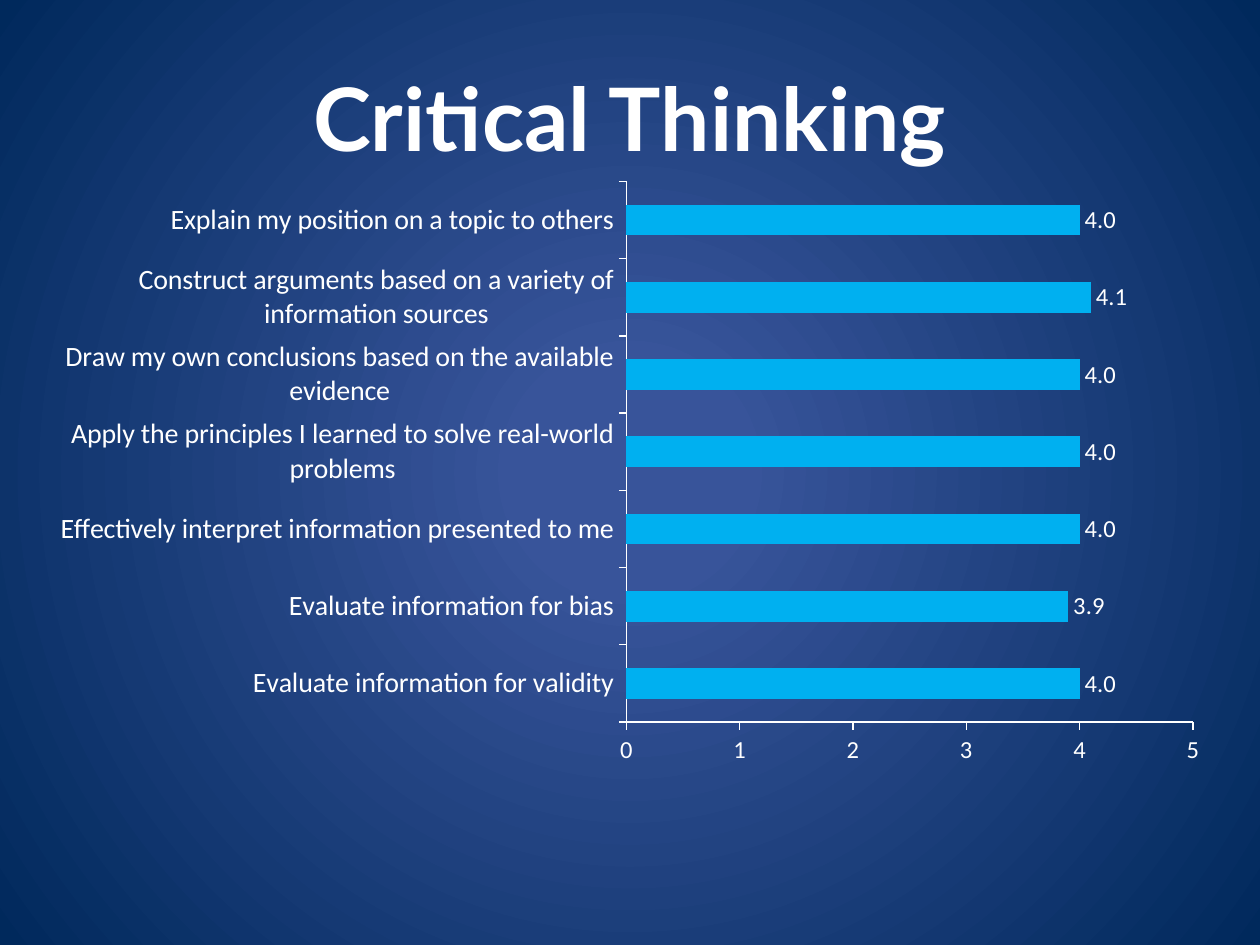
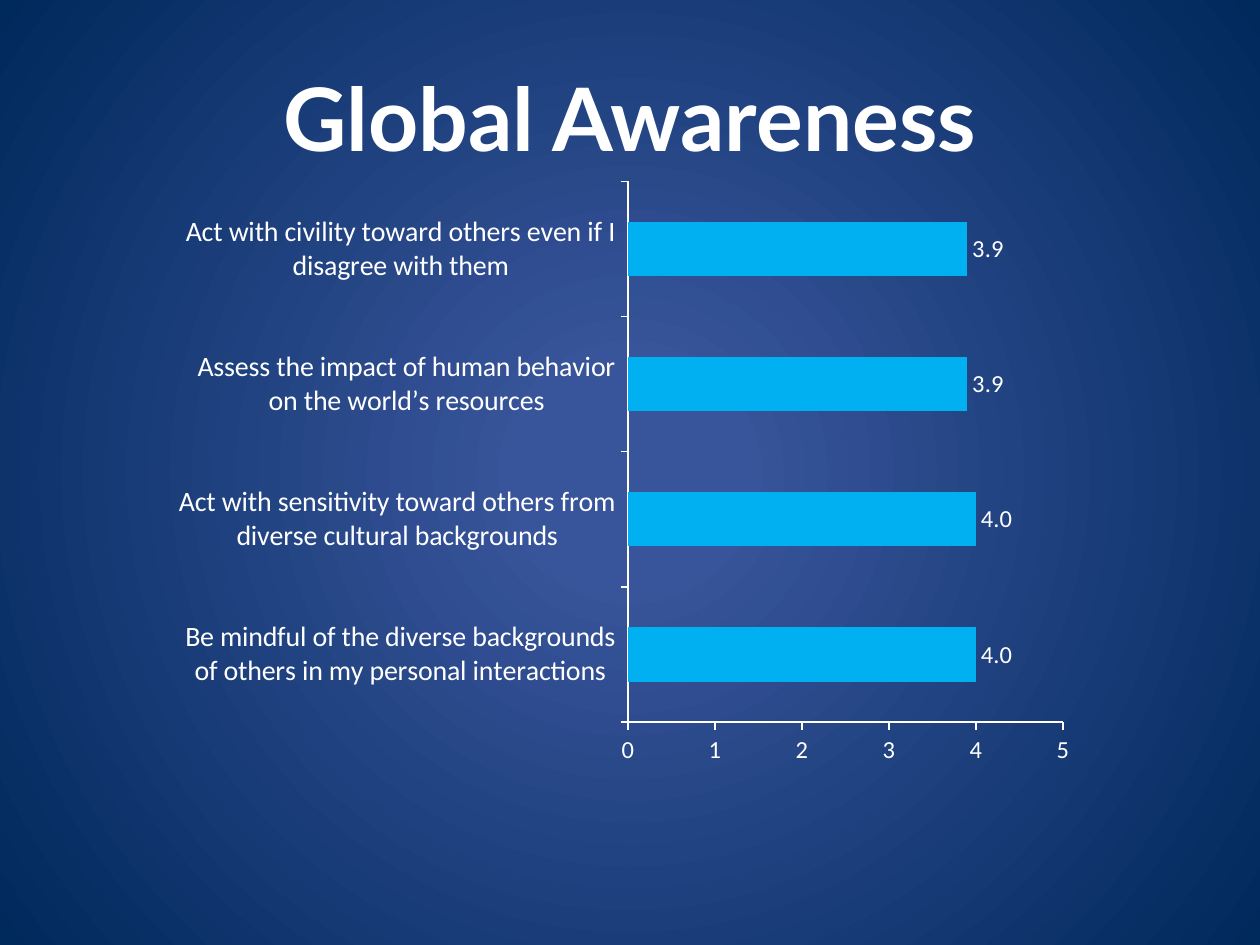
from dataclasses import dataclass

from lxml import etree
from pptx import Presentation
from pptx.chart.data import CategoryChartData as ChartData
from pptx.dml.color import RGBColor as Rgb
from pptx.enum.chart import XL_CHART_TYPE as Kind
from pptx.enum.chart import XL_LABEL_POSITION as Spot
from pptx.enum.chart import XL_TICK_MARK as Tick
from pptx.enum.text import MSO_ANCHOR as Anchor
from pptx.enum.text import PP_ALIGN as Align
from pptx.oxml import parse_xml
from pptx.oxml.ns import nsdecls, qn
from pptx.util import Inches, Pt

WIDE, HIGH = Inches(10), Inches(7.5)
COLORS = {"text": "FFFFFF", "bar": "00B0F0", "glow": "38549A", "edge": "00295C"}
HEAD, BODY = "Lato", "Calibri"
PLOT = {"x": 0.497, "y": 0.051, "w": 0.483, "h": 0.833}  # shares of the chart


@dataclass
class Box:
    """Left, top, width and height as shares of the slide."""
    x: float
    y: float
    w: float
    h: float

    def place(self) -> list[int]:
        return [round(part * side) for part, side in
                zip((self.x, self.y, self.w, self.h), (WIDE, HIGH) * 2)]


@dataclass
class Survey:
    title: str
    width: float  # share of the slide, centred
    scores: dict[str, float]  # bottom bar first


TITLE = Box(0.05, 0.04, 0.9, 0.1667)
SURVEYS = [
    Survey("Critical Thinking", 0.931, {
        "Evaluate information for validity": 4.0,
        "Evaluate information for bias": 3.9,
        "Effectively interpret information presented to me": 4.0,
        "Apply the principles I learned to solve real-world problems": 4.0,
        "Draw my own conclusions based on the available evidence": 4.0,
        "Construct arguments based on a variety of information sources": 4.1,
        "Explain my position on a topic to others": 4.0,
    }),
    Survey("Global Awareness", 0.716, {
        "Be mindful of the diverse backgrounds of others in my personal interactions": 4.0,
        "Act with sensitivity toward others from diverse cultural backgrounds": 4.0,
        "Assess the impact of human behavior on the world’s resources": 3.9,
        "Act with civility toward others even if I disagree with them": 3.9,
    }),
]


def style(font, size: int, name: str = BODY, bold: bool = False) -> None:
    font.size, font.name, font.bold = Pt(size), name, bold
    font.color.rgb = Rgb.from_string(COLORS["text"])


def paint(slide) -> None:
    """Give the slide a round glow that darkens toward its edge."""
    fill = slide.background.fill
    fill.solid()
    old = slide.background._cSld.find(".//" + qn("a:solidFill"))
    glow = parse_xml(
        f'<a:gradFill {nsdecls("a")} rotWithShape="1"><a:gsLst>'
        f'<a:gs pos="14000"><a:srgbClr val="{COLORS["glow"]}">'
        '<a:alpha val="73000"/></a:srgbClr></a:gs>'
        f'<a:gs pos="100000"><a:srgbClr val="{COLORS["edge"]}"/></a:gs></a:gsLst>'
        '<a:path path="circle"><a:fillToRect l="50000" t="50000" r="50000" b="50000"/>'
        '</a:path></a:gradFill>')
    old.getparent().replace(old, glow)


def add_title(slide, text: str) -> None:
    frame = slide.shapes.add_textbox(*TITLE.place()).text_frame
    frame.word_wrap = True
    frame.vertical_anchor = Anchor.MIDDLE
    frame.text = text
    line = frame.paragraphs[0]
    line.alignment = Align.CENTER
    style(line.runs[0].font, 50, HEAD, True)


def pin_plot(chart) -> None:
    """Fix the inner plot area, so both charts share one axis position."""
    area = chart._chartSpace.chart.plotArea
    for old in area.findall(qn("c:layout")):
        area.remove(old)
    layout = etree.Element(qn("c:layout"))
    manual = etree.SubElement(layout, qn("c:manualLayout"))
    marks = {"layoutTarget": "inner", "xMode": "edge", "yMode": "edge", **PLOT}
    for tag, val in marks.items():
        etree.SubElement(manual, qn("c:" + tag), val=str(val))
    area.insert(0, layout)


def set_axis(axis, size: int) -> None:
    axis.has_major_gridlines = False
    axis.major_tick_mark, axis.minor_tick_mark = Tick.OUTSIDE, Tick.NONE
    axis.format.line.color.rgb = Rgb.from_string(COLORS["text"])
    axis.format.line.width = Pt(0.75)
    style(axis.tick_labels.font, size)


def add_bars(slide, survey: Survey) -> None:
    data = ChartData(number_format="0.0")
    data.categories = list(survey.scores)
    data.add_series("Series 1", list(survey.scores.values()))
    box = Box((1 - survey.width) / 2, 0.157, survey.width, 0.687)
    chart = slide.shapes.add_chart(Kind.BAR_CLUSTERED, *box.place(), data).chart
    style(chart.font, 10)
    chart.has_legend = chart.has_title = False
    pin_plot(chart)

    set_axis(chart.category_axis, 16)
    scale = chart.value_axis
    set_axis(scale, 14)
    scale.minimum_scale, scale.maximum_scale, scale.major_unit = 0, 5, 1
    scale.tick_labels.number_format = "0"
    scale.tick_labels.number_format_is_linked = False

    plot = chart.plots[0]
    plot.gap_width, plot.vary_by_categories = 150, False
    bars = plot.series[0].format.fill
    bars.solid()
    bars.fore_color.rgb = Rgb.from_string(COLORS["bar"])
    plot.has_data_labels = True
    labels = plot.data_labels
    labels.show_value, labels.position = True, Spot.OUTSIDE_END
    labels.number_format, labels.number_format_is_linked = "0.0", False
    style(labels.font, 14)


def main() -> None:
    deck = Presentation()
    deck.slide_width, deck.slide_height = WIDE, HIGH
    for survey in SURVEYS:
        slide = deck.slides.add_slide(deck.slide_layouts[6])
        paint(slide)
        add_title(slide, survey.title)
        add_bars(slide, survey)
    deck.save("out.pptx")


if __name__ == "__main__":
    main()
